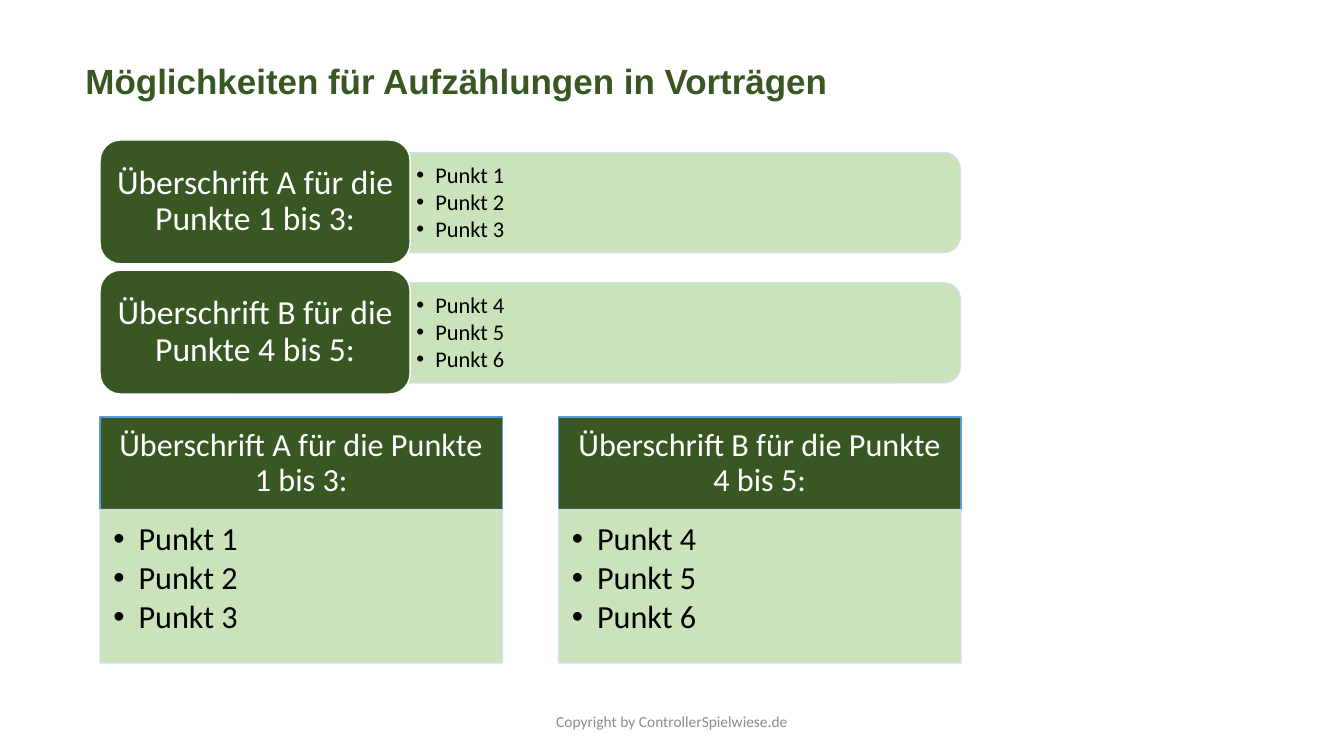
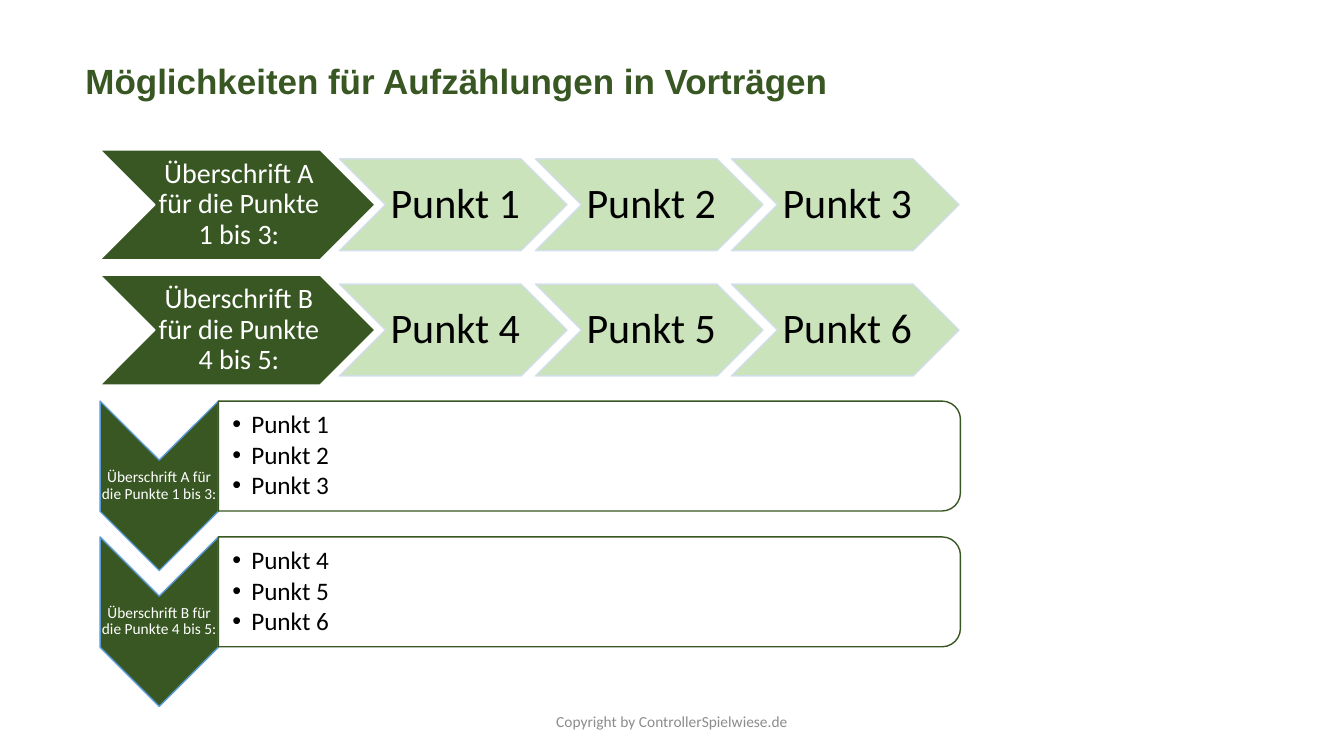
from lxml.etree import SubElement
from pptx import Presentation
from pptx.dml.color import RGBColor
from pptx.enum.shapes import MSO_SHAPE
from pptx.enum.text import MSO_ANCHOR, PP_ALIGN
from pptx.oxml.ns import qn
from pptx.util import Pt

DARK, PALE, WHITE, BLACK = "385723", "C5E0B4", "FFFFFF", "000000"
BLUE, PALE_BLUE, GREY = "5B9BD5", "D2DEEF", "8C8C8C"
LEFT = 71.5
SECTIONS = [
    ("Überschrift A für die Punkte 1 bis 3:", ["Punkt 1", "Punkt 2", "Punkt 3"]),
    ("Überschrift B für die Punkte 4 bis 5:", ["Punkt 4", "Punkt 5", "Punkt 6"]),
]


def add_box(slide, kind, box, fill, line, turned=False):
    left, top, width, height = box
    if turned:
        left, top = left + (width - height) / 2, top + (height - width) / 2
        width, height = height, width
    shape = slide.shapes.add_shape(kind, Pt(left), Pt(top), Pt(width), Pt(height))
    shape.rotation = 90 if turned else 0
    shape.shadow.inherit = False
    shape.fill.solid()
    shape.fill.fore_color.rgb = RGBColor.from_string(fill)
    shape.line.color.rgb = RGBColor.from_string(line)
    shape.line.width = Pt(1)
    if fill == PALE:
        for color in list(shape._element.spPr.iter(qn("a:srgbClr"))):
            SubElement(color, qn("a:alpha"), val="90000")
    return shape


def add_text(target, lines, size, color, margins=(7.2, 3.6, 7.2, 3.6), indent=0, spacing=0.9,
             font="Calibri", bold=False, align=PP_ALIGN.CENTER, anchor=MSO_ANCHOR.MIDDLE):
    frame = target.text_frame
    left, top, right, bottom = map(Pt, margins)
    frame_format = {"word_wrap": True, "vertical_anchor": anchor, "margin_left": left,
                    "margin_top": top, "margin_right": right, "margin_bottom": bottom}
    for name, value in frame_format.items():
        setattr(frame, name, value)
    for index, line in enumerate(lines):
        paragraph = frame.paragraphs[0] if index == 0 else frame.add_paragraph()
        paragraph_format = {"alignment": align, "line_spacing": spacing}
        if indent:
            properties = paragraph._p.get_or_add_pPr()
            properties.set("marL", str(Pt(indent)))
            properties.set("indent", str(-Pt(indent)))
            SubElement(properties, qn("a:buFont"), typeface="Arial")
            SubElement(properties, qn("a:buChar"), char="•")
            paragraph_format.update(alignment=PP_ALIGN.LEFT, space_after=Pt(size * 0.13))
        for name, value in paragraph_format.items():
            setattr(paragraph, name, value)
        run = paragraph.add_run()
        run.text = line
        for name, value in {"name": font, "size": Pt(size), "bold": bold}.items():
            setattr(run.font, name, value)
        run.font.color.rgb = RGBColor.from_string(color)


presentation = Presentation()
presentation.slide_width, presentation.slide_height = Pt(960), Pt(540)

slides = []
for number in range(2):
    slide = presentation.slides.add_slide(presentation.slide_layouts[6])
    title = slide.shapes.add_textbox(Pt(54), Pt(39), Pt(679), Pt(37.5))
    add_text(title, ["Möglichkeiten für Aufzählungen in Vorträgen"], 25, DARK, spacing=1,
             font="Arial", bold=True, align=PP_ALIGN.LEFT, anchor=MSO_ANCHOR.TOP)
    footer = slide.shapes.add_textbox(Pt(318), Pt(500.5), Pt(324), Pt(29))
    add_text(footer, ["Copyright by ControllerSpielwiese.de"], 11, GREY, spacing=1)
    slides.append(slide)
block_slide, arrow_slide = slides

for row, (heading, points) in enumerate(SECTIONS):
    top = 100 + 93 * row
    add_box(block_slide, MSO_SHAPE.ROUND_2_SAME_RECTANGLE, (292.5, top + 9, 393.5, 71.5),
            PALE, PALE_BLUE, turned=True)
    point_list = block_slide.shapes.add_textbox(Pt(292.5), Pt(top + 13), Pt(390), Pt(64))
    add_text(point_list, points, 16, BLACK, (5, 2, 5, 2), indent=13.5)
    label = add_box(block_slide, MSO_SHAPE.ROUNDED_RECTANGLE, (LEFT, top, 221.5, 88.5), DARK, WHITE)
    add_text(label, [heading], 24, WHITE)

for column, (heading, points) in enumerate(SECTIONS):
    left = LEFT + 327.5 * column
    header = add_box(block_slide, MSO_SHAPE.RECTANGLE, (left, 298, 287.5, 66), DARK, BLUE)
    add_text(header, [heading], 23, WHITE, (13, 7, 13, 7))
    body = add_box(block_slide, MSO_SHAPE.RECTANGLE, (left, 364, 287.5, 109.5), PALE, PALE_BLUE)
    add_text(body, points, 23, BLACK, (9.5, 9.5, 13, 14), indent=18, anchor=MSO_ANCHOR.TOP)

for row, (heading, points) in enumerate(SECTIONS):
    top = 107 + 89.5 * row
    label = add_box(arrow_slide, MSO_SHAPE.CHEVRON, (LEFT, top, 196.5, 78.5), DARK, WHITE)
    add_text(label, [heading], 20, WHITE, (2, 1, 0, 1))
    for column, point in enumerate(points):
        step = add_box(arrow_slide, MSO_SHAPE.CHEVRON,
                       (242.5 + 140 * column, top + 6.5, 162.5, 65.5), PALE, PALE_BLUE)
        add_text(step, [point], 30, BLACK, (3, 1.5, 0, 1.5))

for row, (heading, points) in enumerate(SECTIONS):
    top = 286.5 + 97 * row
    add_box(arrow_slide, MSO_SHAPE.CHEVRON, (LEFT, top, 84.5, 121), DARK, BLUE, turned=True)
    label = arrow_slide.shapes.add_textbox(Pt(LEFT), Pt(top + 42.5), Pt(84.5), Pt(36))
    add_text(label, [heading], 11, WHITE, (0.5, 0.5, 0.5, 0.5))
    add_box(arrow_slide, MSO_SHAPE.ROUND_2_SAME_RECTANGLE, (156, top, 530, 78.5),
            WHITE, DARK, turned=True)
    point_list = arrow_slide.shapes.add_textbox(Pt(156), Pt(top + 4), Pt(527), Pt(70.5))
    add_text(point_list, points, 18, BLACK, (10, 1, 1, 1), indent=13.5)

presentation.save("out.pptx")
